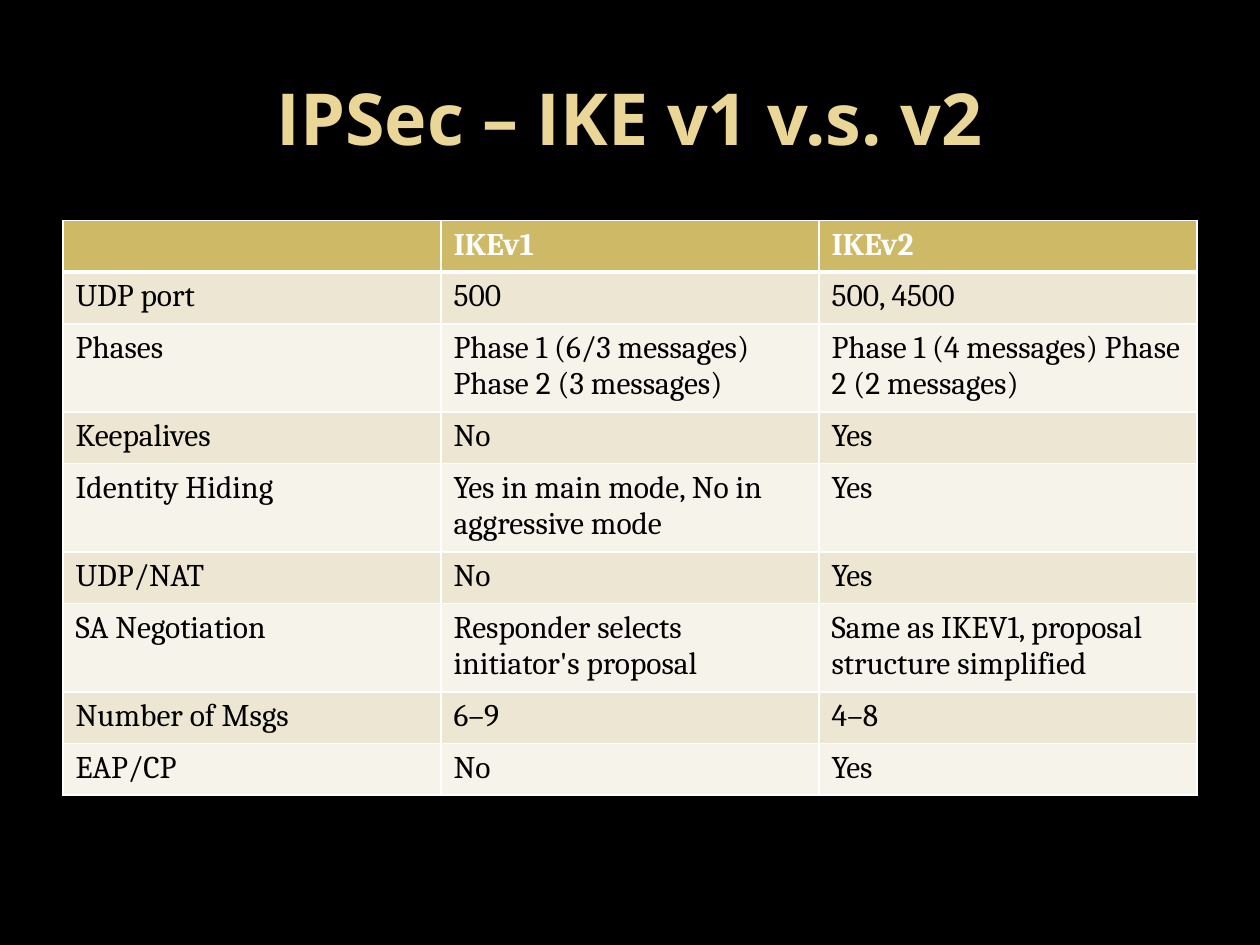
"""Build a slide with a table comparing IKE v1 and IKE v2."""
from lxml.etree import SubElement
from pptx import Presentation
from pptx.dml.color import RGBColor
from pptx.enum.text import MSO_ANCHOR, PP_ALIGN
from pptx.oxml.ns import qn
from pptx.util import Inches, Pt


def color(hex_value):
    return RGBColor.from_string(hex_value)


def add_border(cell, side, width):
    line = SubElement(cell._tc.get_or_add_tcPr(), qn(f"a:ln{side}"), w=str(Pt(width)))
    SubElement(SubElement(line, qn("a:solidFill")), qn("a:srgbClr"), val="FFFFFF")


ROWS = [
    ("", "IKEv1", "IKEv2"),
    ("UDP port", "500", "500, 4500"),
    ("Phases", "Phase 1 (6/3 messages) Phase 2 (3 messages)",
     "Phase 1 (4 messages) Phase 2 (2 messages)"),
    ("Keepalives", "No", "Yes"),
    ("Identity Hiding", "Yes in main mode, No in aggressive mode", "Yes"),
    ("UDP/NAT", "No", "Yes"),
    ("SA Negotiation", "Responder selects initiator's proposal",
     "Same as IKEV1, proposal structure simplified"),
    ("Number of Msgs", "6–9", "4–8"),
    ("EAP/CP", "No", "Yes"),
]

presentation = Presentation()
presentation.slide_width = Inches(10)
presentation.slide_height = Inches(7.5)
slide = presentation.slides.add_slide(presentation.slide_layouts[6])
slide.background.fill.solid()
slide.background.fill.fore_color.rgb = color("000000")

title = slide.shapes.add_textbox(Inches(0.5), Inches(0.3), Inches(9), Inches(1.25))
title.text_frame.word_wrap = True
title.text_frame.vertical_anchor = MSO_ANCHOR.MIDDLE
paragraph = title.text_frame.paragraphs[0]
paragraph.text = "IPSec – IKE v1 v.s. v2"
paragraph.alignment = PP_ALIGN.CENTER
paragraph.font.name = "Open Sans"
paragraph.font.size = Pt(41)
paragraph.font.bold = True
paragraph.font.color.rgb = color("EAD696")

table = slide.shapes.add_table(
    len(ROWS), 3, Inches(0.5), Inches(1.75), Inches(9), Inches(0.41 * len(ROWS))
).table
for row_index, texts in enumerate(ROWS):
    is_header = row_index == 0
    band = "EDE6D3" if row_index % 2 else "F6F3EA"
    for column_index, text in enumerate(texts):
        cell = table.cell(row_index, column_index)
        for side in "LRTB":
            is_header_rule = (row_index, side) in ((0, "B"), (1, "T"))
            add_border(cell, side, 3 if is_header_rule else 1)
        cell.fill.solid()
        cell.fill.fore_color.rgb = color("CEB966" if is_header else band)
        paragraph = cell.text_frame.paragraphs[0]
        paragraph.text = text
        paragraph.font.name = "Cambria"
        paragraph.font.size = Pt(18)
        paragraph.font.bold = is_header
        paragraph.font.color.rgb = color("FFFFFF" if is_header else "000000")

presentation.save("out.pptx")
